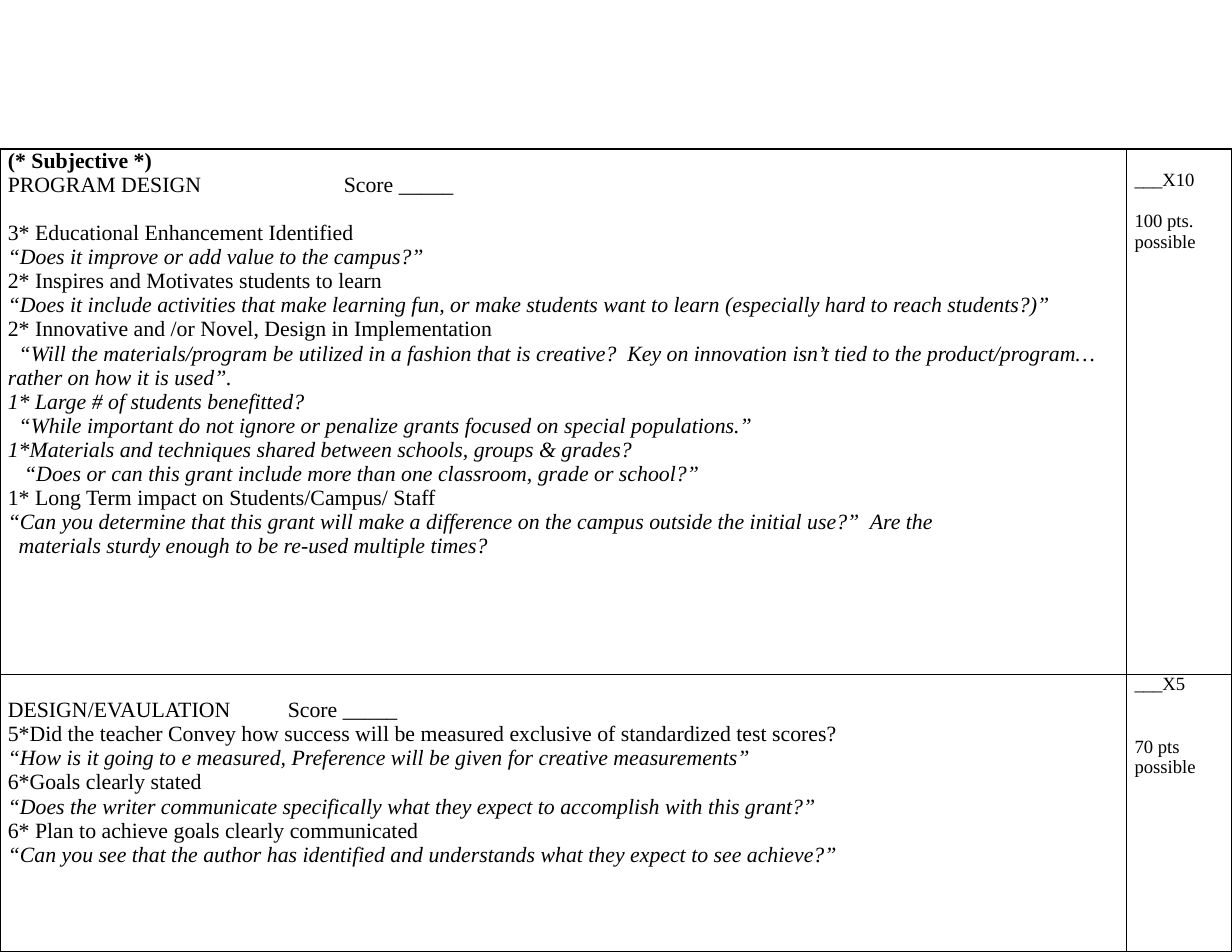
from lxml.etree import SubElement
from pptx import Presentation
from pptx.dml.color import RGBColor
from pptx.oxml.ns import qn
from pptx.util import Inches, Pt

COLORS = {"ink": "000000"}
FONT = "Times New Roman"
WIDTH, HEIGHT = 11, 8.5
COLUMNS = [10.06, 0.94]
ROWS = [4.69, 2.48]
CRITERIA_SIZE, POINTS_SIZE = 14, 12
LINE_FACTOR = 1.11  # line height as a share of the font size
TAB_STEP = 1.1

# Each line: text, style (b bold, i italic), first-line indent in points, blank lines before
PROGRAM_DESIGN = [
    ("(* Subjective *)", "b", 0, 0),
    ("PROGRAM DESIGN\t\t\tScore _____", "", 0, 0),
    ("3* Educational Enhancement Identified", "", 0, 1),
    ("“Does it improve or add value to the campus?”", "i", 0, 0),
    ("2* Inspires and Motivates students to learn", "", 0, 0),
    ("“Does it include activities that make learning fun, or make students want to learn "
     "(especially hard to reach students?)”", "i", 0, 0),
    ("2* Innovative and /or Novel, Design in Implementation", "", 0, 0),
    ("“Will the materials/program be utilized in a fashion that is creative?  Key on innovation "
     "isn’t tied to the product/program…rather on how it is used”.", "i", 7, 0),
    ("1* Large # of students benefitted?", "i", 0, 0),
    ("“While important do not ignore or penalize grants focused on special populations.”",
     "i", 7, 0),
    ("1*Materials and techniques shared between schools, groups & grades?", "i", 0, 0),
    ("“Does or can this grant include more than one classroom, grade or school?”", "i", 10.5, 0),
    ("1* Long Term impact on Students/Campus/ Staff", "", 0, 0),
    ("“Can you determine that this grant will make a difference on the campus outside the "
     "initial use?”  Are the", "i", 0, 0),
    ("materials sturdy enough to be re-used multiple times?", "i", 7, 0),
]
PROGRAM_POINTS = [
    ("___X10", "", 0, 1),
    ("100 pts.", "", 0, 1),
    ("possible", "", 0, 0),
]
EVALUATION = [
    ("DESIGN/EVAULATION\t\tScore _____", "", 0, 1),
    ("5*Did the teacher Convey how success will be measured exclusive of standardized "
     "test scores?", "", 0, 0),
    ("“How is it going to e measured, Preference will be given for creative measurements”",
     "i", 0, 0),
    ("6*Goals clearly stated", "", 0, 0),
    ("“Does the writer communicate specifically what they expect to accomplish with this grant?”",
     "i", 0, 0),
    ("6* Plan to achieve goals clearly communicated", "", 0, 0),
    ("“Can you see that the author has identified and understands what they expect to see "
     "achieve?”", "i", 0, 0),
]
EVALUATION_POINTS = [
    ("___X5", "", 0, 0),
    ("70 pts", "", 0, 2),
    ("possible", "", 0, 0),
]
RUBRIC = [[PROGRAM_DESIGN, PROGRAM_POINTS], [EVALUATION, EVALUATION_POINTS]]


def add_tab_stops(properties):
    stops = SubElement(properties, qn("a:tabLst"))
    for step in range(1, 5):
        SubElement(stops, qn("a:tab"), pos=str(Inches(step * TAB_STEP)), algn="l")


def write_line(para, line, size):
    text, style, indent, _ = line
    para.text = text
    properties = para._p.get_or_add_pPr()
    properties.set("marL", "0")
    properties.set("indent", str(Pt(indent)))
    if "\t" in text:
        add_tab_stops(properties)
    para.font.name = FONT
    para.font.size = Pt(size)
    para.font.bold = "b" in style
    para.font.italic = "i" in style
    para.font.color.rgb = RGBColor.from_string(COLORS["ink"])


def fill_cell(cell, lines, size):
    """Write the lines; blank lines become a top margin or space before."""
    frame = cell.text_frame
    for index, line in enumerate(lines):
        para = frame.add_paragraph() if index else frame.paragraphs[0]
        gap = Pt(line[3] * size * LINE_FACTOR)
        if index == 0:
            cell.margin_top = gap
        elif gap:
            para.space_before = gap
        write_line(para, line, size)
    cell.margin_left = cell.margin_right = Inches(0.07)
    cell.margin_bottom = 0


def draw_borders(cell):
    properties = cell._tc.get_or_add_tcPr()
    for position, side in enumerate(("a:lnL", "a:lnR", "a:lnT", "a:lnB")):
        border = SubElement(properties, qn(side), w=str(Pt(1)))
        fill = SubElement(border, qn("a:solidFill"))
        SubElement(fill, qn("a:srgbClr"), val=COLORS["ink"])
        properties.insert(position, border)


def add_rubric(page):
    top = HEIGHT - sum(ROWS)
    frame = page.shapes.add_table(len(ROWS), len(COLUMNS), 0, Inches(top),
                                  Inches(WIDTH), Inches(sum(ROWS)))
    table = frame.table
    table.first_row = table.horz_banding = False
    for column, width in zip(table.columns, COLUMNS):
        column.width = Inches(width)
    for row, height, texts in zip(table.rows, ROWS, RUBRIC):
        row.height = Inches(height)
        for cell, lines, size in zip(row.cells, texts, (CRITERIA_SIZE, POINTS_SIZE)):
            fill_cell(cell, lines, size)
            cell.fill.background()
            draw_borders(cell)


def main():
    deck = Presentation()
    deck.slide_width, deck.slide_height = Inches(WIDTH), Inches(HEIGHT)
    page = deck.slides.add_slide(deck.slide_layouts[6])
    add_rubric(page)
    deck.save("out.pptx")


if __name__ == "__main__":
    main()
